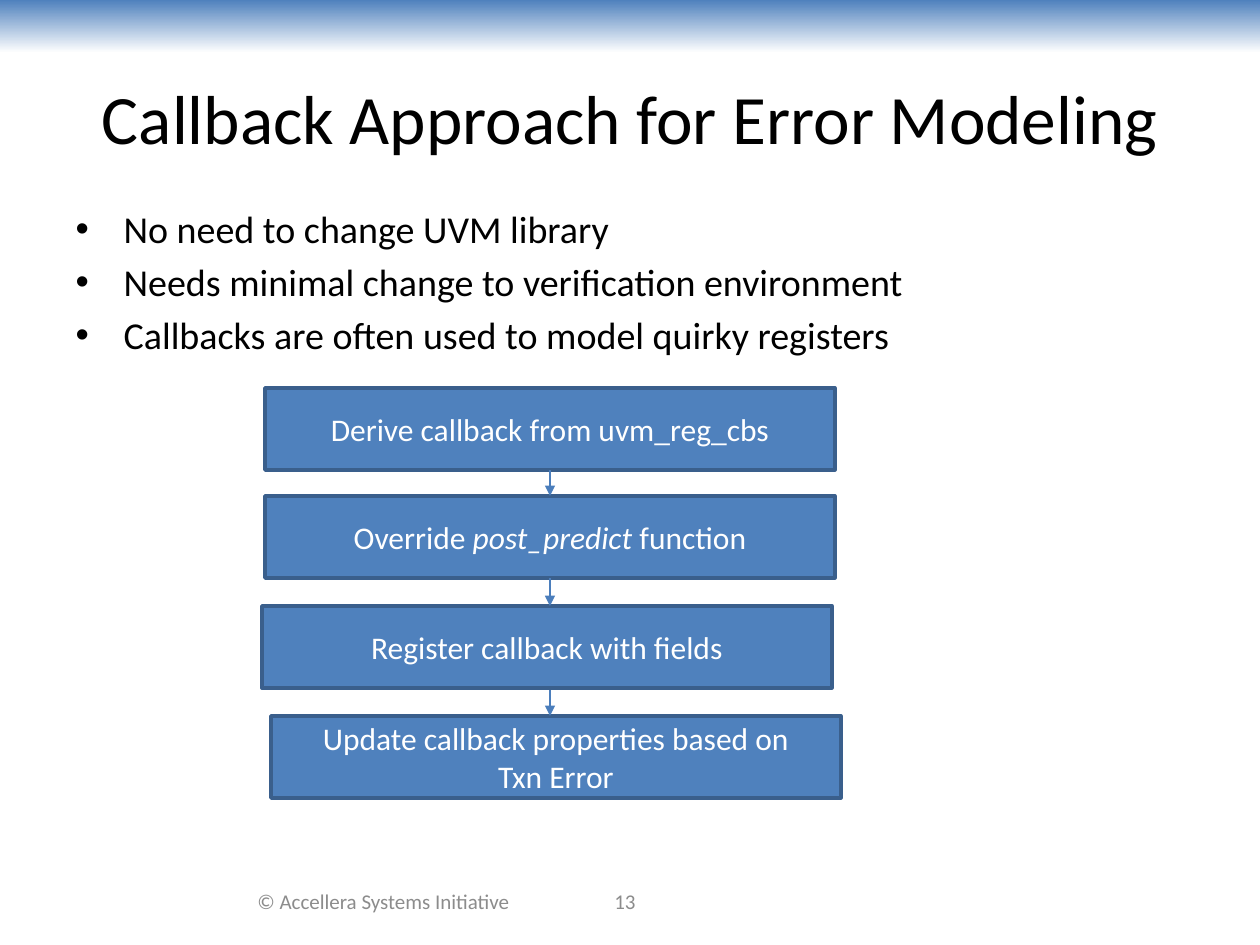
from lxml.etree import SubElement
from pptx import Presentation
from pptx.dml.color import RGBColor
from pptx.enum.dml import MSO_LINE
from pptx.enum.shapes import MSO_CONNECTOR, MSO_SHAPE
from pptx.enum.text import MSO_ANCHOR, MSO_AUTO_SIZE, PP_ALIGN
from pptx.oxml.ns import qn
from pptx.util import Emu, Pt

EMU_PER_PX = 914400 / 126


def px(length):
    return Emu(round(length * EMU_PER_PX))


def color(value):
    return RGBColor.from_string(value)


def apply(target, values):
    for name, value in values.items():
        setattr(target, name, value)


class SlideBuilder:
    font_name = "Calibri"
    blue = "4F81BD"
    outline = "3A5F8C"
    arrow_blue = "4B7EBC"
    black = "000000"
    white = "FFFFFF"
    gray = "8C8C8C"

    def __init__(self, slide):
        self.slide = slide

    def place(self, shape, left, top, width, height):
        apply(shape, {"left": px(left), "top": px(top),
                      "width": px(width), "height": px(height)})

    def add_runs(self, paragraph, runs, size, font_color, alignment):
        paragraph.alignment = alignment
        for text, italic in runs:
            for index, line in enumerate(text.split("\n")):
                if index:
                    paragraph.add_line_break()
                run = paragraph.add_run()
                run.text = line
                apply(run.font, {"name": self.font_name, "size": Pt(size), "italic": italic})
                run.font.color.rgb = color(font_color)

    def frame(self, shape, anchor):
        apply(shape.text_frame, {"word_wrap": True, "auto_size": MSO_AUTO_SIZE.NONE,
                                 "vertical_anchor": anchor})
        return shape.text_frame

    def band(self, left, top, width, height):
        shape = self.slide.shapes.add_shape(
            MSO_SHAPE.RECTANGLE, px(left), px(top), px(width), px(height))
        shape.shadow.inherit = False
        shape.line.fill.background()
        shape.fill.gradient()
        shape.fill.gradient_angle = 270
        for stop, value, position in zip(shape.fill.gradient_stops, (self.blue, self.white), (0, 1)):
            stop.color.rgb = color(value)
            stop.position = position

    def title(self, text, *bounds):
        shape = self.slide.shapes.title
        self.place(shape, *bounds)
        frame = self.frame(shape, MSO_ANCHOR.MIDDLE)
        self.add_runs(frame.paragraphs[0], [(text, False)], 39.6, self.black, PP_ALIGN.CENTER)

    def bullets(self, items, *bounds):
        shape = self.slide.placeholders[1]
        self.place(shape, *bounds)
        frame = self.frame(shape, MSO_ANCHOR.TOP)
        for index, item in enumerate(items):
            paragraph = frame.add_paragraph() if index else frame.paragraphs[0]
            properties = paragraph._p.get_or_add_pPr()
            properties.set("marL", str(px(48)))
            properties.set("indent", str(-px(48)))
            SubElement(properties, qn("a:buChar"), char="•")
            self.add_runs(paragraph, [(item, False)], 21.7, self.black, PP_ALIGN.LEFT)
        frame.paragraphs[0].space_before = Pt(0)

    def label(self, text, left, top, width, height):
        shape = self.slide.shapes.add_textbox(px(left), px(top), px(width), px(height))
        frame = self.frame(shape, MSO_ANCHOR.MIDDLE)
        self.add_runs(frame.paragraphs[0], [(text, False)], 12, self.gray, PP_ALIGN.CENTER)

    def box(self, runs, left, top, width, height):
        shape = self.slide.shapes.add_shape(
            MSO_SHAPE.RECTANGLE, px(left), px(top), px(width), px(height))
        shape.shadow.inherit = False
        shape.fill.solid()
        shape.fill.fore_color.rgb = color(self.blue)
        shape.line.color.rgb = color(self.outline)
        shape.line.width = Pt(2)
        frame = self.frame(shape, MSO_ANCHOR.MIDDLE)
        self.add_runs(frame.paragraphs[0], runs, 18, self.white, PP_ALIGN.CENTER)
        return shape

    def arrow(self, x, top, bottom, source=None, target=None):
        connector = self.slide.shapes.add_connector(
            MSO_CONNECTOR.STRAIGHT, px(x), px(top), px(x), px(bottom))
        if source is not None:
            connector.begin_connect(source, 2)
        if target is not None:
            connector.end_connect(target, 0)
        connector.line.color.rgb = color(self.arrow_blue)
        apply(connector.line, {"width": Pt(0.75), "dash_style": MSO_LINE.SOLID})
        properties = connector._element.spPr
        SubElement(properties.find(qn("a:ln")), qn("a:tailEnd"), type="triangle")
        SubElement(properties, qn("a:effectLst"))


def main():
    presentation = Presentation()
    apply(presentation, {"slide_width": px(1260), "slide_height": px(945)})
    builder = SlideBuilder(presentation.slides.add_slide(presentation.slide_layouts[1]))

    builder.band(0, 0, 1260, 53)
    builder.title("Callback Approach for Error Modeling", 63, 38, 1134, 157)
    builder.bullets([
        "No need to change UVM library",
        "Needs minimal change to verification environment",
        "Callbacks are often used to model quirky registers",
    ], 63, 199, 1134, 147)
    builder.label("© Accellera Systems Initiative", 231, 876, 305, 50)
    builder.label("13", 504, 876, 242, 50)

    steps = [
        (265, 388, [("Derive callback from uvm_reg_cbs", False)]),
        (265, 496, [("Override ", False), ("post_predict", True), (" function", False)]),
        (262, 606, [("Register callback with fields", False)]),
        (271, 716, [("Update callback properties based on\nTxn Error", False)]),
    ]
    derive, override, *_ = [
        builder.box(runs, left, top, 570, 82) for left, top, runs in steps]

    builder.arrow(550, 470, 496, derive, override)
    builder.arrow(550, 578, 606, override)
    builder.arrow(550, 690, 716)

    presentation.save("out.pptx")


if __name__ == "__main__":
    main()
